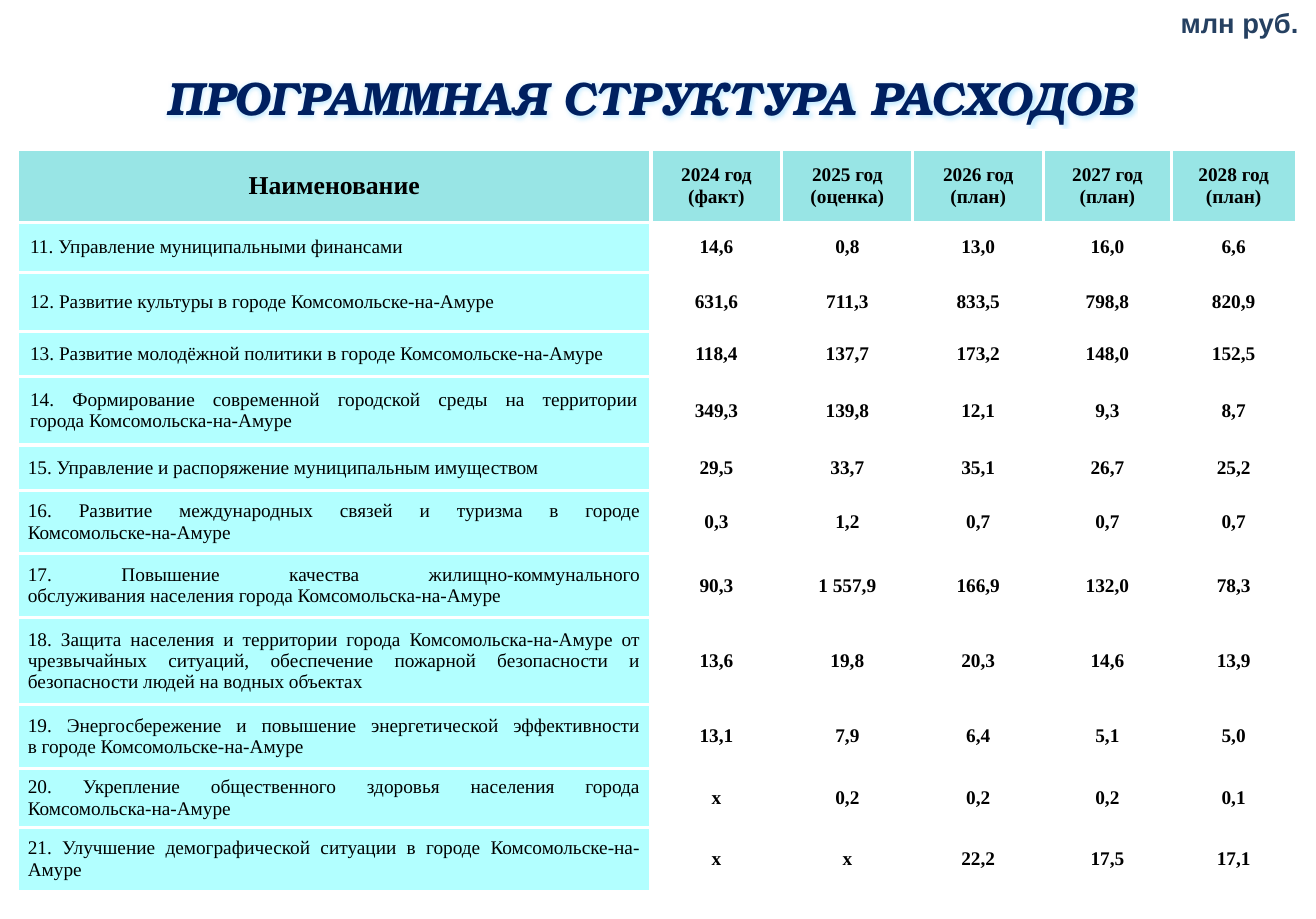
"""Build the slide with the programme structure of city spending."""
from dataclasses import dataclass

from lxml import etree
from pptx import Presentation
from pptx.dml.color import RGBColor
from pptx.enum.text import MSO_ANCHOR, MSO_AUTO_SIZE, PP_ALIGN
from pptx.oxml.ns import qn
from pptx.util import Inches, Pt

CENTER, JUSTIFY, RIGHT = PP_ALIGN.CENTER, PP_ALIGN.JUSTIFY, PP_ALIGN.RIGHT
MIDDLE, BOTTOM, TOP = MSO_ANCHOR.MIDDLE, MSO_ANCHOR.BOTTOM, MSO_ANCHOR.TOP
FIXED = MSO_AUTO_SIZE.NONE
SLIDE_WIDTH, SLIDE_HEIGHT = 11.36, 7.93


@dataclass(frozen=True)
class Theme:
    title_font: str = "TeX Gyre Bonum"
    unit_font: str = "Arial"
    table_font: str = "Times New Roman"
    title_color: str = "002060"
    glow_color: str = "66CCFF"
    unit_color: str = "254061"
    text_color: str = "000000"
    header_fill: str = "33CCCC"
    name_fill: str = "66FFFF"
    border_color: str = "FFFFFF"
    title_size: int = 29
    unit_size: int = 17
    header_size: int = 16
    body_size: int = 12
    border_width: float = 2.25


theme = Theme()

column_widths = [5.47, 1.13, 1.13, 1.13, 1.1, 1.08]
row_heights = [0.63, 0.43, 0.51, 0.39, 0.59, 0.39, 0.55, 0.55, 0.75, 0.55, 0.51, 0.55]
rows = [
    ["Наименование", "2024 год\n(факт)", "2025 год\n(оценка)",
     "2026 год (план)", "2027 год (план)", "2028 год (план)"],
    ["11. Управление муниципальными финансами", "14,6", "0,8", "13,0", "16,0", "6,6"],
    ["12. Развитие культуры в городе Комсомольске-на-Амуре",
     "631,6", "711,3", "833,5", "798,8", "820,9"],
    ["13. Развитие молодёжной политики в городе Комсомольске-на-Амуре",
     "118,4", "137,7", "173,2", "148,0", "152,5"],
    ["14. Формирование современной городской среды на территории\vгорода Комсомольска-на-Амуре",
     "349,3", "139,8", "12,1", "9,3", "8,7"],
    ["15. Управление и распоряжение муниципальным имуществом",
     "29,5", "33,7", "35,1", "26,7", "25,2"],
    ["16. Развитие международных связей и туризма в городе\vКомсомольске-на-Амуре",
     "0,3", "1,2", "0,7", "0,7", "0,7"],
    ["17. Повышение качества жилищно-коммунального\v"
     "обслуживания населения города Комсомольска-на-Амуре",
     "90,3", "1 557,9", "166,9", "132,0", "78,3"],
    ["18. Защита населения и территории города Комсомольска-на-Амуре от чрезвычайных ситуаций, "
     "обеспечение пожарной безопасности и безопасности людей на водных объектах",
     "13,6", "19,8", "20,3", "14,6", "13,9"],
    ["19. Энергосбережение и повышение энергетической эффективности\v"
     "в городе Комсомольске-на-Амуре", "13,1", "7,9", "6,4", "5,1", "5,0"],
    ["20. Укрепление общественного здоровья населения города\vКомсомольска-на-Амуре",
     "х", "0,2", "0,2", "0,2", "0,1"],
    ["21. Улучшение демографической ситуации в городе Комсомольске-на-Амуре",
     "х", "х", "22,2", "17,5", "17,1"],
]


def percent_box(left, top, width, height):
    """Turn percentages of the slide into lengths."""
    return [Inches(side * share / 100) for side, share in
            zip([SLIDE_WIDTH, SLIDE_HEIGHT] * 2, [left, top, width, height])]


def format_text(frame, align, font_name, size, color, bold=True, italic=False):
    """Format every paragraph, run and line break of a text frame."""
    for para in frame.paragraphs:
        para.alignment = align
        for line_break in para._p.findall(qn("a:br")):
            etree.SubElement(line_break, qn("a:rPr"), sz=str(size * 100))
        for span in para.runs:
            span.font.name = font_name
            span.font.size = Pt(size)
            span.font.bold = bold
            span.font.italic = italic
            span.font.color.rgb = RGBColor.from_string(color)


deck = Presentation()
deck.slide_width, deck.slide_height = Inches(SLIDE_WIDTH), Inches(SLIDE_HEIGHT)
page = deck.slides.add_slide(deck.slide_layouts[5])

title = page.shapes.title
title.left, title.top, title.width, title.height = percent_box(8.36, 2.52, 82.13, 12.61)
unit_box = page.shapes.add_textbox(*percent_box(88.47, -0.13, 11.27, 5.17))
for box, text, anchor, margin in [
    (title, "ПРОГРАММНАЯ СТРУКТУРА РАСХОДОВ", BOTTOM, 0.12),
    (unit_box, "млн руб.", TOP, 0.06),
]:
    frame = box.text_frame
    frame.text = text
    frame.auto_size = FIXED
    frame.vertical_anchor = anchor
    frame.margin_left = frame.margin_right = Inches(0.12)
    frame.margin_top = frame.margin_bottom = Inches(margin)
unit_box.text_frame.word_wrap = False
format_text(unit_box.text_frame, RIGHT, theme.unit_font, theme.unit_size, theme.unit_color)
format_text(title.text_frame, CENTER, theme.title_font, theme.title_size,
            theme.title_color, italic=True)

title_properties = title.text_frame.paragraphs[0].runs[0].font._element
effects = etree.Element(qn("a:effectLst"))
glow = etree.SubElement(effects, qn("a:glow"), rad=str(Pt(4)))
glow_color = etree.SubElement(glow, qn("a:srgbClr"), val=theme.glow_color)
etree.SubElement(glow_color, qn("a:alpha"), val="40000")
title_properties.find(qn("a:solidFill")).addnext(effects)

table = page.shapes.add_table(
    len(rows), len(column_widths), *percent_box(1.32, 16.27, 97.1, 80.96)).table
table.first_row = table.horz_banding = False
for column, width in zip(table.columns, column_widths):
    column.width = Inches(width)

for row_index, (texts, height) in enumerate(zip(rows, row_heights)):
    table.rows[row_index].height = Inches(height)
    is_header = row_index == 0
    for column_index, text in enumerate(texts):
        is_name = column_index == 0
        is_programme = is_name and not is_header
        is_tight = is_programme and row_index >= 5
        cell = table.cell(row_index, column_index)
        cell.text_frame.text = text
        cell.vertical_anchor = MIDDLE
        cell.margin_left = cell.margin_right = Inches(0.09 if is_tight else 0.11)
        cell.margin_top = cell.margin_bottom = Inches(0 if is_tight else 0.07)
        format_text(cell.text_frame, JUSTIFY if is_programme else CENTER, theme.table_font,
                    theme.header_size if is_header and is_name else theme.body_size,
                    theme.text_color, bold=not is_programme)

        cell_properties = cell._tc.get_or_add_tcPr()
        for edge in ("a:lnL", "a:lnR", "a:lnT", "a:lnB"):
            line = etree.SubElement(cell_properties, qn(edge), w=str(Pt(theme.border_width)))
            paint = etree.SubElement(line, qn("a:solidFill"))
            etree.SubElement(paint, qn("a:srgbClr"), val=theme.border_color)

        if is_header or is_name:
            cell.fill.solid()
            cell.fill.fore_color.rgb = RGBColor.from_string(
                theme.header_fill if is_header else theme.name_fill)
            fill_color = cell_properties.find(qn("a:solidFill")).find(qn("a:srgbClr"))
            etree.SubElement(fill_color, qn("a:alpha"), val="50000")
        else:
            cell.fill.background()

deck.save("out.pptx")
